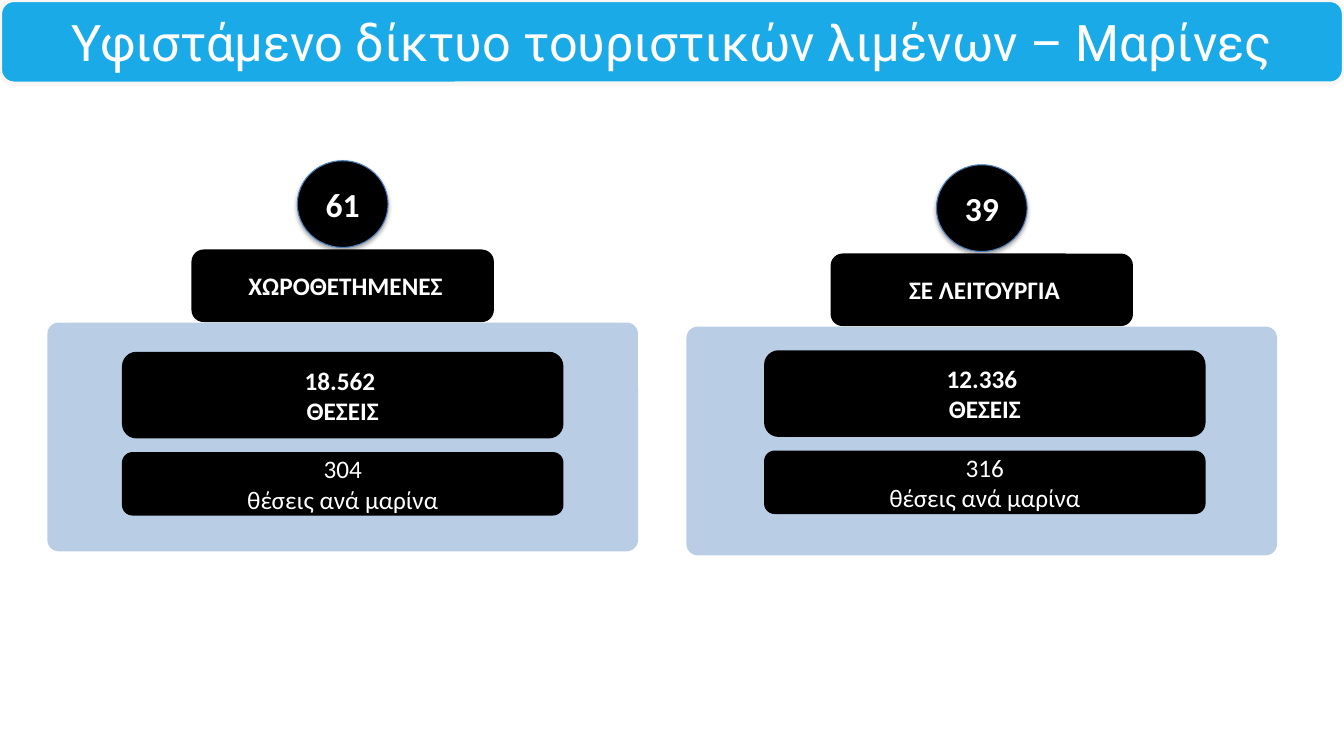
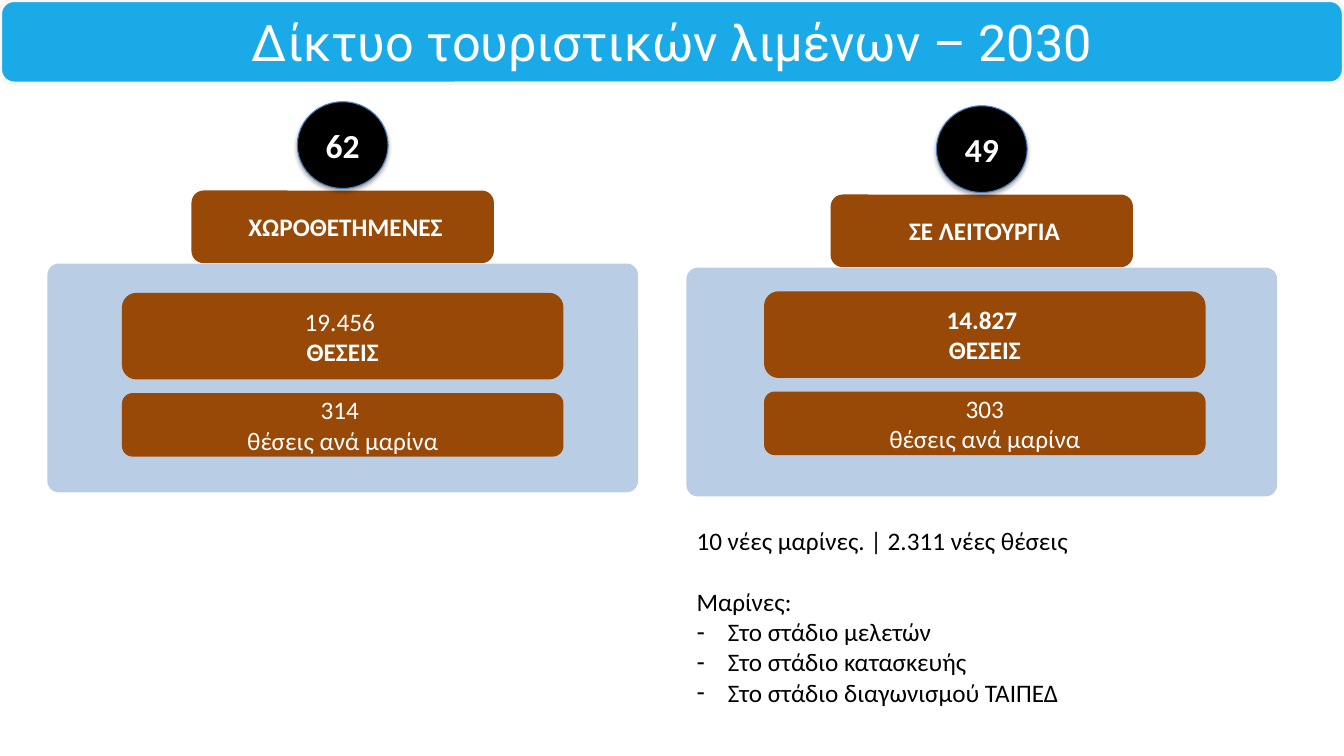
"""Builds two slides on the network of tourist ports."""
from lxml.etree import SubElement
from pptx import Presentation
from pptx.dml.color import RGBColor
from pptx.enum.shapes import MSO_SHAPE as Geometry
from pptx.enum.text import MSO_ANCHOR as Anchor, MSO_AUTO_SIZE as Fit, PP_ALIGN as Align
from pptx.oxml.ns import qn
from pptx.util import Inches, Pt

CELL = Inches(0.1)
COLUMNS, ROWS = 133.33, 75
BLACK, BROWN, WHITE = "000000", "984807", "FFFFFF"
PANEL_BLUE, BAND_BLUE = "B9CDE5", "1BAAE8"
BAND_EDGE, CIRCLE_EDGE = "F8F7F3", "4B7EBC"
TITLE_ONLY, TITLE_AND_LIST = 5, 1
BAND_AREA = (0, 0, COLUMNS, 8.3)


def colour(hex_value):
    return RGBColor.from_string(hex_value)


def assign(target, values):
    for name, value in values.items():
        setattr(target, name, value)


class Deck:
    TITLE = {"name": "Roboto", "size": Pt(36), "bold": False}
    NUMBER = {"name": "Calibri", "size": Pt(24)}
    BODY = {"name": "Calibri", "size": Pt(18)}
    FRAME = {"word_wrap": True, "auto_size": Fit.NONE, "vertical_anchor": Anchor.MIDDLE}

    def __init__(self):
        self.file = Presentation()
        assign(self.file, {"slide_width": int(COLUMNS * CELL), "slide_height": ROWS * CELL})

    def place(self, target, area):
        edges = (int(cells * CELL) for cells in area)
        assign(target, dict(zip(("left", "top", "width", "height"), edges)))

    def add_text(self, paragraph, text, font, ink=WHITE, bold=False):
        run = paragraph.add_run()
        run.text = text
        assign(run.font, {"bold": bold, **font})
        run.font.color.rgb = colour(ink)

    def box(self, area, fill, lines=(), font=BODY, geometry=Geometry.ROUNDED_RECTANGLE,
            edge=None, edge_width=0.75):
        box = self.slide.shapes.add_shape(geometry, *(int(cells * CELL) for cells in area))
        box.shadow.inherit = False
        box.fill.solid()
        box.fill.fore_color.rgb = colour(fill)
        if edge:
            box.line.color.rgb = colour(edge)
            box.line.width = Pt(edge_width)
        else:
            box.line.fill.background()
        frame = box.text_frame
        assign(frame, self.FRAME)
        for index, (text, bold) in enumerate(lines):
            paragraph = frame.add_paragraph() if index else frame.paragraphs[0]
            paragraph.alignment = Align.CENTER
            self.add_text(paragraph, text, font, bold=bold)
        return box

    def start(self, title, layout=TITLE_ONLY):
        self.slide = self.file.slides.add_slide(self.file.slide_layouts[layout])
        self.box(BAND_AREA, BAND_BLUE, edge=BAND_EDGE, edge_width=3)
        heading = self.slide.shapes.title
        self.place(heading, BAND_AREA)
        assign(heading.text_frame, self.FRAME)
        paragraph = heading.text_frame.paragraphs[0]
        paragraph.alignment = Align.CENTER
        self.add_text(paragraph, title, self.TITLE)
        tree = heading._element.getparent()
        tree.remove(heading._element)
        tree.append(heading._element)

    def circle(self, area, number):
        circle = self.box(area, BLACK, [(number, True)], self.NUMBER, Geometry.OVAL, CIRCLE_EDGE)
        effects = circle._element.spPr.find(qn("a:effectLst"))
        shadow = SubElement(effects, qn("a:outerShdw"), blurRad=str(Pt(3.1)),
                            dist=str(Pt(1.8)), dir="5400000", rotWithShape="0")
        tint = SubElement(shadow, qn("a:srgbClr"), val=BLACK)
        SubElement(tint, qn("a:alpha"), val="35000")

    def marinas(self, corner, inset, fill, count, status, berths, average, bold_berths=True):
        left, top = corner
        inner_left, inner_top = left + inset[0], top + inset[1]
        self.box((left + 14.3, top + 8.8, 30, 7.2), fill, [(status, True)])
        panel = self.box((left, top + 16.05, 58.6, 22.7), PANEL_BLUE)
        panel.adjustments[0] = 0.05
        self.circle((left + 24.8, top, 9, 8.6), count)
        self.box((inner_left, inner_top, 43.8, 8.6), fill,
                 [(berths, bold_berths), ("ΘΕΣΕΙΣ", True)])
        self.box((inner_left, inner_top + 9.95, 43.8, 6.3), fill,
                 [(average, False), ("θέσεις ανά μαρίνα", False)])

    def outlook(self, area, items):
        body = self.slide.placeholders[1]
        self.place(body, area)
        frame = body.text_frame
        assign(frame, {**self.FRAME, "vertical_anchor": Anchor.TOP})
        for index, (text, dashed, gap) in enumerate(items):
            paragraph = frame.add_paragraph() if index else frame.paragraphs[0]
            indent = Inches(0.31) if dashed else 0
            properties = paragraph._p.get_or_add_pPr()
            properties.set("marL", str(indent))
            properties.set("indent", str(-indent))
            if dashed:
                SubElement(properties, qn("a:buChar"), char="-")
            else:
                SubElement(properties, qn("a:buNone"))
            paragraph.space_before = Pt(gap)
            self.add_text(paragraph, text, self.BODY, BLACK)


def main():
    located, operating = " ΧΩΡΟΘΕΤΗΜΕΝΕΣ", " ΣΕ ΛΕΙΤΟΥΡΓΙΑ"
    left_inset, right_inset = (7.4, 18.95), (7.7, 18.4)
    deck = Deck()

    deck.start("Υφιστάμενο δίκτυο τουριστικών λιμένων – Μαρίνες")
    deck.marinas((4.7, 15.95), left_inset, BLACK, "61", located, "18.562 ", "304")
    deck.marinas((68.1, 16.35), right_inset, BLACK, "39", operating, "12.336 ", "316")

    deck.start("Δίκτυο τουριστικών λιμένων – 2030", TITLE_AND_LIST)
    deck.marinas((4.7, 10.1), left_inset, BROWN, "62", located, "19.456 ", "314 ", False)
    deck.marinas((68.1, 10.5), right_inset, BROWN, "49", operating, "14.827 ", "303")
    deck.outlook((68.1, 51.6, 56.6, 19.2), [
        ("10 νέες μαρίνες. | 2.311 νέες θέσεις", False, 0),
        ("Μαρίνες:", False, 22),
        ("Στο στάδιο μελετών", True, 0),
        ("Στο στάδιο κατασκευής", True, 0),
        ("Στο στάδιο διαγωνισμού ΤΑΙΠΕΔ", True, 0),
    ])
    deck.file.save("out.pptx")


if __name__ == "__main__":
    main()
